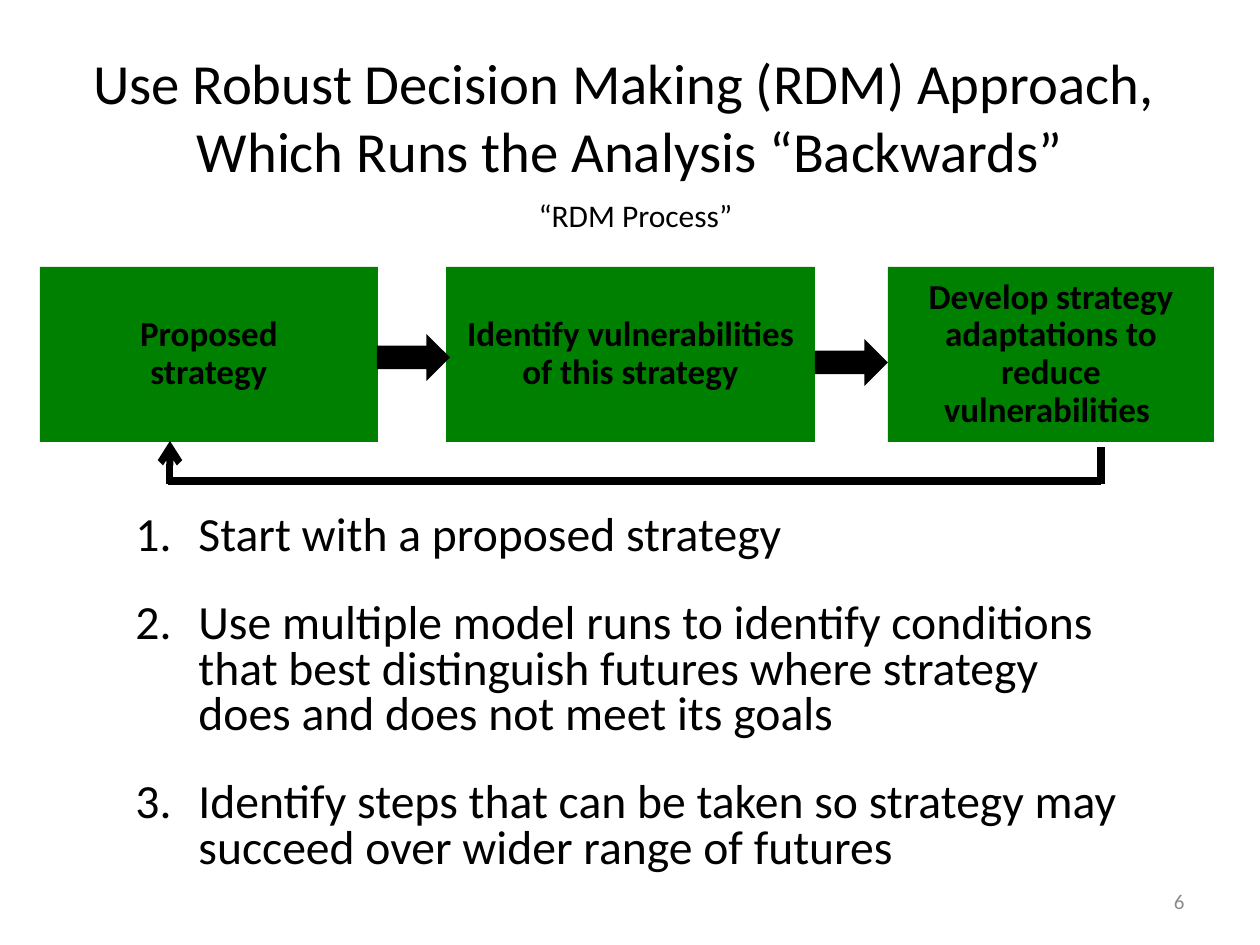
from lxml.etree import SubElement
from pptx import Presentation
from pptx.dml.color import RGBColor
from pptx.enum.shapes import MSO_CONNECTOR as Connector, MSO_SHAPE as Shape
from pptx.enum.text import MSO_ANCHOR as Anchor, MSO_AUTO_SIZE as AutoSize, PP_ALIGN as Align
from pptx.oxml.ns import qn
from pptx.util import Emu, Pt

COLORS = {"ink": "000000", "step": "008000", "number": "8C8C8C", "page": "FFFFFF"}
EMU_PER_PX = 914400 / 126


def px(length):
    return Emu(round(length * EMU_PER_PX))


def rgb(name):
    return RGBColor.from_string(COLORS[name])


class SlideBuilder:
    font = "Calibri"

    def __init__(self, deck):
        self.page = deck.slides.add_slide(deck.slide_layouts[5])
        self.page.background.fill.solid()
        self.page.background.fill.fore_color.rgb = rgb("page")

    def fill_text(self, box, lines, size, align=Align.LEFT, anchor=Anchor.TOP,
                  color="ink", bold=False, spacing=1.0, after=0):
        frame = box.text_frame
        frame.word_wrap = True
        frame.auto_size = AutoSize.NONE
        frame.vertical_anchor = anchor
        frame.text = "\n".join(lines)
        for para in frame.paragraphs:
            para.alignment = align
            para.line_spacing = spacing
            para.space_before = Pt(0)
            para.space_after = Pt(after)
            para.font.name = self.font
            para.font.size = Pt(size)
            para.font.bold = bold
            para.font.color.rgb = rgb(color)
        return box

    def title(self, bounds, text, size):
        box = self.page.shapes.title
        box.left, box.top, box.width, box.height = map(px, bounds)
        self.fill_text(box, [text], size, Align.CENTER, Anchor.MIDDLE)

    def text(self, bounds, lines, size, **style):
        box = self.page.shapes.add_textbox(*map(px, bounds))
        return self.fill_text(box, lines, size, **style)

    def numbered_list(self, bounds, lines, size, indent):
        box = self.text(bounds, lines, size, spacing=0.8, after=24)
        for para in box.text_frame.paragraphs:
            props = para._p.get_or_add_pPr()
            props.set("marL", str(px(indent)))
            props.set("indent", str(-px(indent)))
            numbering = SubElement(props, qn("a:buAutoNum"), type="arabicPeriod")
            props.find(qn("a:defRPr")).addprevious(numbering)

    def shape(self, kind, bounds, color):
        shape = self.page.shapes.add_shape(kind, *map(px, bounds))
        shape.shadow.inherit = False
        shape.fill.solid()
        shape.fill.fore_color.rgb = rgb(color)
        shape.line.fill.background()
        return shape

    def step(self, bounds, text):
        box = self.shape(Shape.RECTANGLE, bounds, "step")
        self.fill_text(box, [text], 20, Align.CENTER, Anchor.MIDDLE, bold=True, spacing=0.9)

    def line(self, start, end, width, arrow=False):
        line = self.page.shapes.add_connector(Connector.STRAIGHT, *map(px, start + end))
        line.line.color.rgb = rgb("ink")
        line.line.width = Pt(width)
        outline = line._element.spPr.find(qn("a:ln"))
        if arrow:
            SubElement(outline, qn("a:tailEnd"), type="arrow")
        SubElement(line._element.spPr, qn("a:effectLst"))


def main():
    deck = Presentation()
    deck.slide_width, deck.slide_height = px(1260), px(945)
    slide = SlideBuilder(deck)

    # Heading
    slide.title((0, 74, 1260, 84),
                "Use Robust Decision Making (RDM) Approach, \vWhich Runs the Analysis “Backwards”", 32.4)
    caption = slide.text((383, 200, 505, 54), ["“RDM Process”"], 18,
                         align=Align.CENTER, spacing=0.9)
    frame = caption.text_frame
    frame.margin_left = frame.margin_right = frame.margin_top = frame.margin_bottom = 0

    # Process steps
    for left, width, text in [
        (40, 338, "Proposed\vstrategy"),
        (446, 369, "Identify vulnerabilities of this strategy"),
        (888, 326, "Develop strategy adaptations to reduce vulnerabilities "),
    ]:
        slide.step((left, 267, width, 175), text)
    for left, top in [(377, 334), (815, 339)]:
        slide.shape(Shape.RIGHT_ARROW, (left, top, 73, 47), "ink")

    # Feedback loop
    slide.line((168, 481), (1101, 481), 4.5)
    slide.line((1101, 484), (1101, 447), 4.5)
    slide.line((170, 484), (170, 441), 4, arrow=True)

    # Explanation
    slide.numbered_list((123, 509, 1016, 379), [
        "Start with a proposed strategy",
        "Use multiple model runs to identify conditions that best distinguish futures "
        "where strategy does and does not meet its goals",
        "Identify steps that can be taken so strategy may succeed over wider range of futures",
    ], 27.2, indent=63)

    # Page number
    slide.text((903, 876, 294, 50), ["6"], 12, align=Align.RIGHT,
               anchor=Anchor.MIDDLE, color="number")

    deck.save("out.pptx")


if __name__ == "__main__":
    main()
